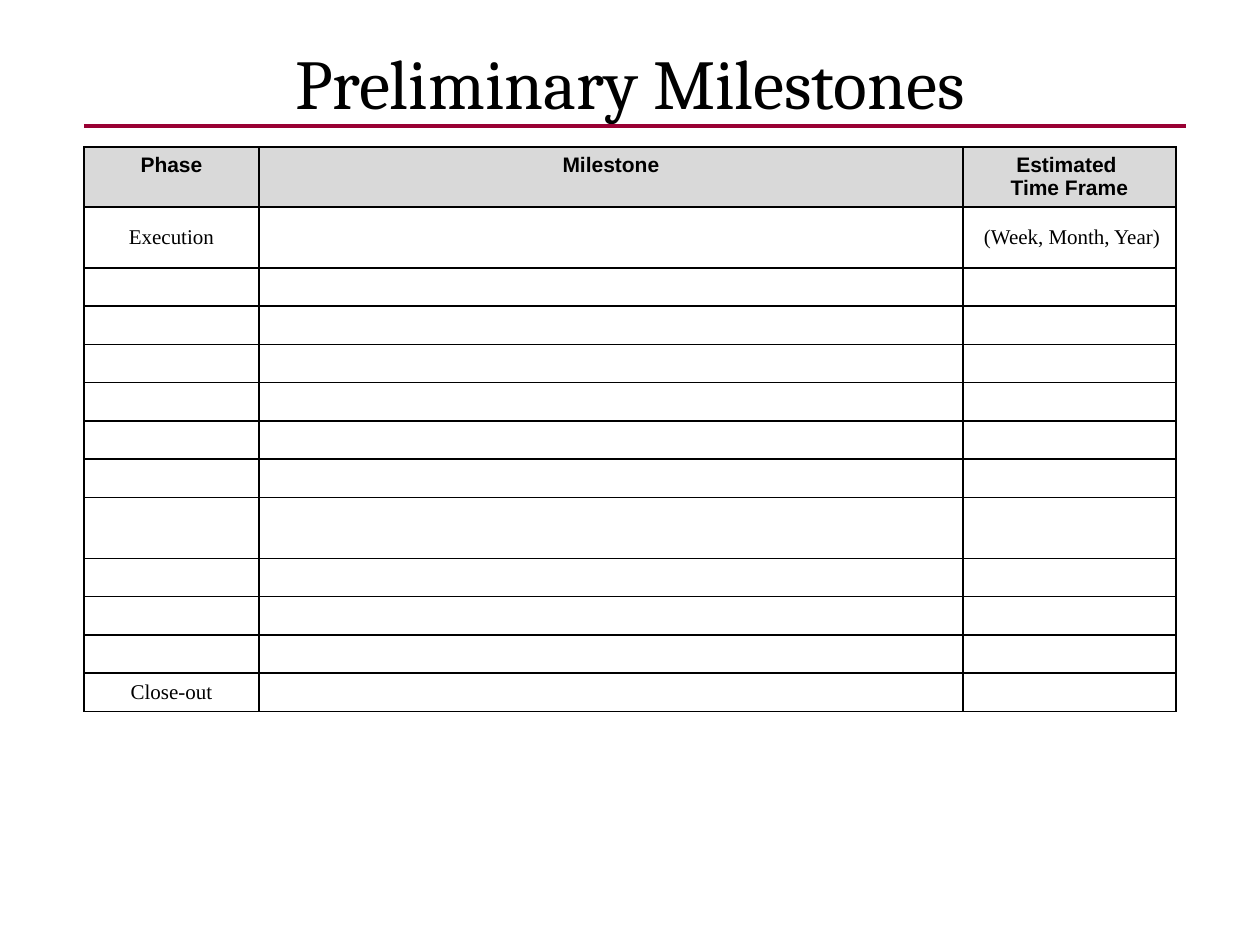
import pptx
import pptx.dml.color
import pptx.enum.shapes
import pptx.enum.text
import pptx.oxml.ns
import pptx.util
from lxml import etree

SCALE = 914400 / 126
HEADERS = ["Phase", "Milestone", "Estimated \nTime Frame"]
ROWS = 13
TALL_ROWS = {0: 60, 1: 61, 8: 61}
LABELS = {(1, 0): "Execution", (1, 2): " (Week, Month, Year)", (12, 0): "Close-out"}


def px(n):
    """Turn pixels into EMU."""
    return pptx.util.Emu(round(n * SCALE))


def color(value):
    """Turn a hex string into a colour."""
    return pptx.dml.color.RGBColor.from_string(value)


def sub(parent, tag, **attrs):
    """Append a DrawingML element to a parent."""
    return etree.SubElement(parent, pptx.oxml.ns.qn(tag), attrs)


def style(p, font, size, bold=False):
    """Centre a paragraph and format its runs."""
    p.alignment = pptx.enum.text.PP_ALIGN.CENTER
    for r in p.runs:
        r.font.name = font
        r.font.size = pptx.util.Pt(size)
        r.font.bold = bold
        r.font.color.rgb = color("000000")


def add_title(s, x, y, w, h):
    """Place the slide title in its box."""
    sp = s.shapes.title
    sp.left, sp.top, sp.width, sp.height = px(x), px(y), px(w), px(h)
    tf = sp.text_frame
    tf.text = "Preliminary Milestones"
    tf.word_wrap = True
    tf.auto_size = pptx.enum.text.MSO_AUTO_SIZE.NONE
    tf.vertical_anchor = pptx.enum.text.MSO_ANCHOR.TOP
    tf.margin_top = px(2)
    tf.margin_bottom = 0
    style(tf.paragraphs[0], "Cambria", 40)


def add_rule(s, x, y, w):
    """Draw the rule under the title."""
    line = s.shapes.add_connector(
        pptx.enum.shapes.MSO_CONNECTOR.STRAIGHT, px(x), px(y), px(x + w), px(y))
    line.line.color.rgb = color("990033")
    line.line.width = pptx.util.Pt(2.25)
    sub(line._element.spPr, "a:effectLst")


def add_borders(cell):
    """Give a cell thin black borders on all sides."""
    tc_pr = cell._tc.get_or_add_tcPr()
    for side in ("a:lnL", "a:lnR", "a:lnT", "a:lnB"):
        ln = sub(tc_pr, side, w=str(pptx.util.Pt(1)))
        sub(sub(ln, "a:solidFill"), "a:srgbClr", val="000000")


def fill_cell(cell, row, col):
    """Write and format one cell of the milestone table."""
    header = row == 0
    add_borders(cell)
    if header:
        cell.fill.solid()
        cell.fill.fore_color.rgb = color("D9D9D9")
    else:
        cell.fill.background()
        cell.vertical_anchor = pptx.enum.text.MSO_ANCHOR.MIDDLE
    text = HEADERS[col] if header else LABELS.get((row, col), "")
    cell.text_frame.text = text
    for p in cell.text_frame.paragraphs:
        style(p, "Arial" if header else "Times New Roman", 12, header)
        p_pr = p._p.get_or_add_pPr()
        p_pr.set("marL", str(px(48)))
        p_pr.set("indent", str(px(-48)))
        if not text:
            sub(p._p, "a:endParaRPr", sz="1200")


def add_milestones(s, x, y, widths, row_h):
    """Build the table of phases, milestones and time frames."""
    heights = [TALL_ROWS.get(i, row_h) for i in range(ROWS)]
    table = s.shapes.add_table(
        ROWS, len(widths), px(x), px(y), px(sum(widths)), px(sum(heights))).table
    table.horz_banding = False
    for column, w in zip(table.columns, widths):
        column.width = px(w)
    for i, h in enumerate(heights):
        table.rows[i].height = px(h)
        for j in range(len(widths)):
            fill_cell(table.cell(i, j), i, j)


def main():
    """Build and save the slide."""
    prs = pptx.Presentation()
    prs.slide_width, prs.slide_height = px(1260), px(945)
    s = prs.slides.add_slide(prs.slide_layouts[5])
    add_title(s, 63, 38, 1134, 78)
    add_rule(s, 84, 126, 1102)
    add_milestones(s, 84, 147, [175, 704, 213], 36.5)
    prs.save("out.pptx")


if __name__ == "__main__":
    main()
